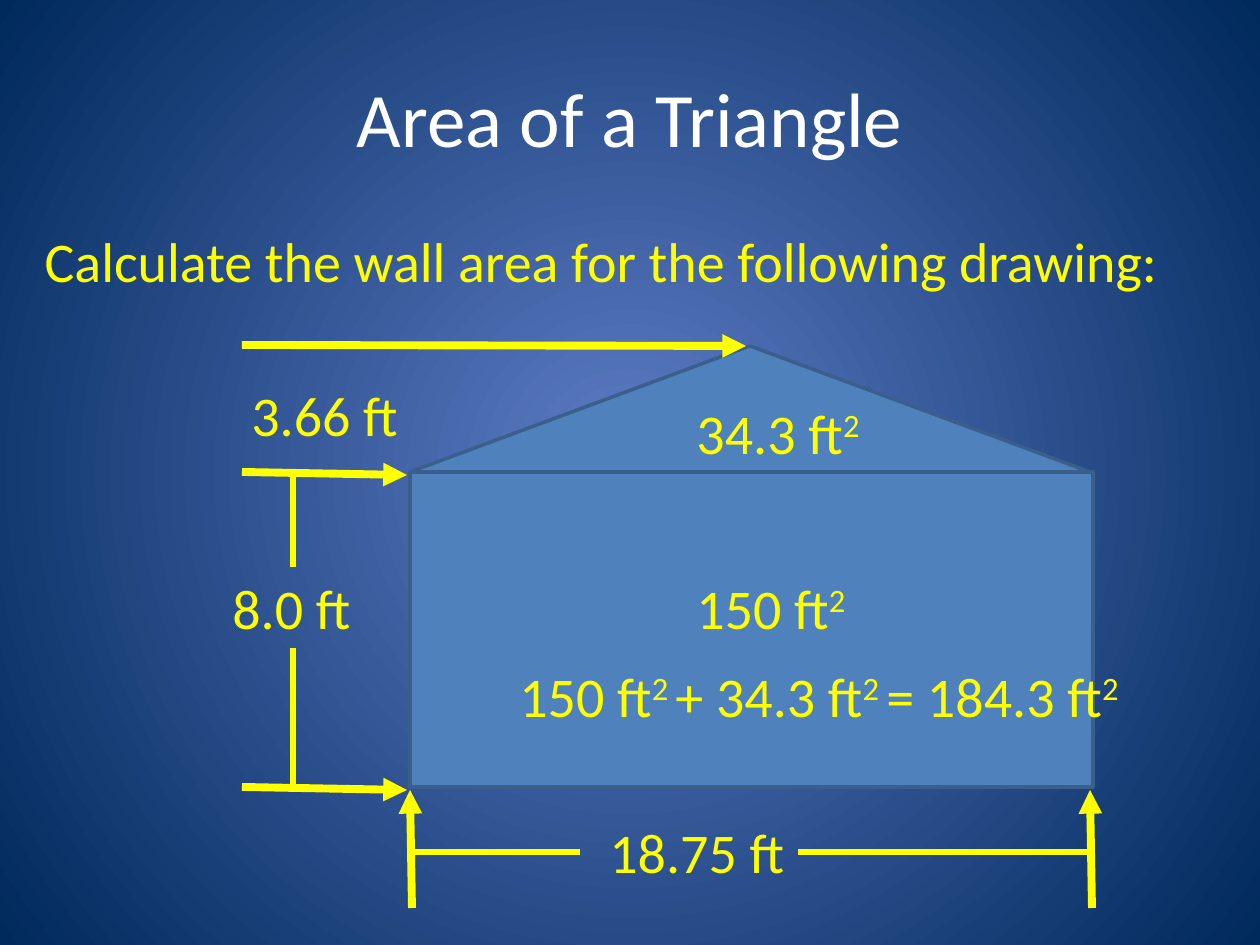
from lxml import etree
from pptx import Presentation
from pptx.dml.color import RGBColor as RGB
from pptx.enum.shapes import MSO_CONNECTOR as LINK, MSO_SHAPE as SHAPE
from pptx.enum.text import MSO_AUTO_SIZE as FIT, PP_ALIGN as ALIGN
from pptx.oxml.ns import qn
from pptx.util import Emu, Pt

HUES = {
    "glow": "5E7CC5",
    "navy": "00295C",
    "title": "FFFFFF",
    "mark": "FFFF00",
    "wall": "4F81BD",
    "edge": "3A5F8C",
}
SCALE = 914400 / 126


def px(*nums):
    """Turn pixel lengths into a list of EMU."""
    return [Emu(round(n * SCALE)) for n in nums]


def style(para, size, hue):
    para.font.name = "Calibri"
    para.font.size = Pt(size)
    para.font.color.rgb = RGB.from_string(HUES[hue])


deck = Presentation()
deck.slide_width, deck.slide_height = px(1260, 945)
slide = deck.slides.add_slide(deck.slide_layouts[1])
shapes = slide.shapes

# Background: a round glow from the centre
back = slide.background.fill
back.gradient()
for stop, hue in zip(back.gradient_stops, ("glow", "navy")):
    stop.color.rgb = RGB.from_string(HUES[hue])
grad = slide.background._cSld.find(".//" + qn("a:gradFill"))
grad.remove(grad.find(qn("a:lin")))
ring = etree.SubElement(grad, qn("a:path"), {"path": "circle"})
etree.SubElement(ring, qn("a:fillToRect"), dict.fromkeys("ltrb", "50000"))

# Title and task
title, body = shapes.title, slide.placeholders[1]
for holder, box, words, size, hue in (
    (title, (63, 38, 1134, 157), "Area of a Triangle", 44, "title"),
    (body, (32, 220, 1187, 624),
     "Calculate the wall area for the following drawing:", 32, "mark"),
):
    holder.left, holder.top, holder.width, holder.height = px(*box)
    holder.text_frame.text = words
    style(holder.text_frame.paragraphs[0], size, hue)
title.text_frame.paragraphs[0].alignment = ALIGN.CENTER
props = body.text_frame.paragraphs[0]._p.get_or_add_pPr()
props.set("marL", "0")
props.set("indent", "0")
props.insert_element_before(props.makeelement(qn("a:buNone")), "a:tabLst", "a:defRPr", "a:extLst")

# Gable and wall
for kind, box in (
    (SHAPE.ISOSCELES_TRIANGLE, (410, 346, 680, 126)),
    (SHAPE.RECTANGLE, (410, 472, 683, 315)),
):
    part = shapes.add_shape(kind, *px(*box))
    part.shadow.inherit = False
    part.fill.solid()
    part.fill.fore_color.rgb = RGB.from_string(HUES["wall"])
    part.line.color.rgb = RGB.from_string(HUES["edge"])
    part.line.width = Pt(2)

# Arrows at the corners, then the plain dimension lines
arrows = [
    (242, 345, 746, 346),
    (242, 472, 407, 475),
    (242, 787, 407, 790),
    (412, 908, 410, 790),
    (1092, 908, 1090, 790),
]
rules = [
    (293, 475, 293, 567),
    (293, 648, 293, 787),
    (580, 852, 412, 852),
    (1092, 852, 798, 852),
]
for ends in arrows + rules:
    line = shapes.add_connector(LINK.STRAIGHT, *px(*ends))
    line.line.color.rgb = RGB.from_string(HUES["mark"])
    line.line.width = Pt(4.5 if ends in arrows else 3)
    if ends in arrows:
        etree.SubElement(line.line._get_or_add_ln(), qn("a:tailEnd"), type="triangle")
    etree.SubElement(line._element.spPr, qn("a:effectLst"))

# Labels: every second run is raised
for box, runs in (
    ((220, 567, 146, 81), ["8.0 ft"]),
    ((597, 811, 204, 81), ["18.75 ft"]),
    ((239, 374, 175, 81), ["3.66 ft"]),
    ((684, 392, 207, 81), ["34.3 ft", "2"]),
    ((684, 567, 193, 81), ["150 ft", "2"]),
    ((507, 655, 658, 81), ["150 ft", "2 ", "+ 34.3 ft", "2 ", "= 184.3 ft", "2"]),
):
    frame = shapes.add_textbox(*px(*box)).text_frame
    frame.word_wrap = False
    frame.auto_size = FIT.SHAPE_TO_FIT_TEXT
    para = frame.paragraphs[0]
    style(para, 32, "mark")
    for i, words in enumerate(runs):
        run = para.add_run()
        run.text = words
        if i % 2:
            run._r.get_or_add_rPr().set("baseline", "30000")

deck.save("out.pptx")
